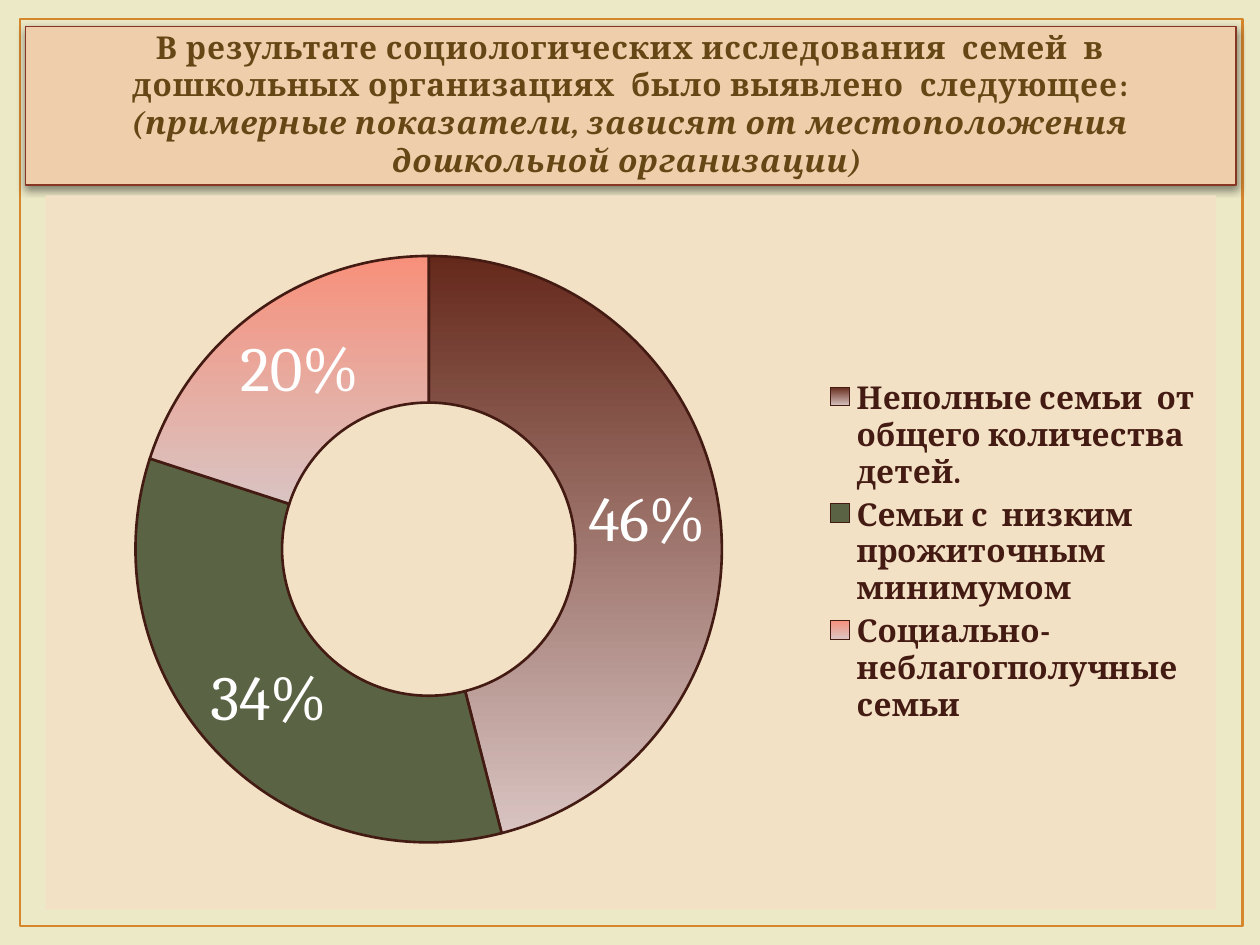
"""Build a slide with a framed title and a doughnut chart of family groups."""
import lxml.etree
import pptx
import pptx.chart.data
import pptx.dml.color
import pptx.enum.chart
import pptx.enum.shapes
import pptx.enum.text
import pptx.oxml
import pptx.oxml.ns
import pptx.util

Inches = pptx.util.Inches
Pt = pptx.util.Pt
qn = pptx.oxml.ns.qn

COLOURS = {
    "page": "ECE9C6", "frame": "D6862D", "title": "EFCFAB", "title_line": "873624",
    "title_text": "674616", "panel": "F3E1C6", "dark": "441B12", "label": "FFFFFF",
}
FONT = "Cambria"
HEADING = "В результате социологических исследования  семей  в дошкольных организациях  было выявлено  следующее:"
NOTE = "(примерные показатели, зависят от местоположения дошкольной организации) "
FAMILIES = [
    ("Неполные семьи  от общего количества детей.", 0.46, ("65291B", "D9C4C2")),
    ("Семьи с  низким прожиточным минимумом", 0.34, ("5A6343",)),
    ("Социально-неблагогполучные семьи", 0.2, ("F7907B", "D9C4C2")),
]
FRAME = (0.16, 0.15, 9.7, 7.2)
TITLE = (0.2, 0.21, 9.61, 1.26)
CHART = (0.36, 1.55, 9.29, 5.67)
PLOT = {"x": 0.077, "y": 0.085, "w": 0.501, "h": 0.821}
NAMESPACES = " ".join(pptx.oxml.ns.nsdecls(prefix) for prefix in ("a", "c"))
SHADOW = (
    f'<a:effectLst {NAMESPACES}><a:outerShdw blurRad="63500" dist="25400" dir="5400000">'
    '<a:srgbClr val="000000"><a:alpha val="43000"/></a:srgbClr></a:outerShdw></a:effectLst>'
)


def colour(value):
    return pptx.dml.color.RGBColor.from_string(value)


def paint(item, fill=None, line=None, width=1):
    if fill:
        item.fill.solid()
        item.fill.fore_color.rgb = colour(fill)
    if line:
        item.line.color.rgb = colour(line)
        item.line.width = Pt(width)


def style_font(font, size, value, bold=False, italic=False):
    font.name, font.size, font.bold, font.italic = FONT, Pt(size), bold, italic
    font.color.rgb = colour(value)


def add_text(para, text, spacing=0, **style):
    span = para.add_run()
    span.text = text
    style_font(span.font, **style)
    span.font._element.set("spc", str(int(spacing * 100)))


def add_title(page):
    box = page.shapes.title
    box.left, box.top, box.width, box.height = map(Inches, TITLE)
    paint(box, COLOURS["title"], COLOURS["title_line"], 0.75)
    box._element.spPr.append(pptx.oxml.parse_xml(SHADOW))
    frame = box.text_frame
    frame.word_wrap = True
    frame.auto_size = pptx.enum.text.MSO_AUTO_SIZE.NONE
    frame.vertical_anchor = pptx.enum.text.MSO_ANCHOR.BOTTOM
    para = frame.paragraphs[0]
    para.alignment = pptx.enum.text.PP_ALIGN.CENTER
    style = {"size": 18, "value": COLOURS["title_text"], "bold": True, "spacing": 0.5}
    add_text(para, HEADING, **style)
    para.add_line_break()
    add_text(para, NOTE, italic=True, **style)


def place_plot(chart):
    edges = "".join(f'<c:{key}Mode val="edge"/>' for key in "xy")
    sizes = "".join(f'<c:{key} val="{value}"/>' for key, value in PLOT.items())
    area = chart._chartSpace.chart.plotArea
    for old in area.findall(qn("c:layout")):
        area.remove(old)
    area.insert(0, pptx.oxml.parse_xml(
        f'<c:layout {NAMESPACES}><c:manualLayout><c:layoutTarget val="inner"/>'
        f'{edges}{sizes}</c:manualLayout></c:layout>'))


def add_families(page):
    data = pptx.chart.data.CategoryChartData(number_format="0%")
    names, values, fills = zip(*FAMILIES)
    data.categories = names
    data.add_series("Series 1", values)
    kind = pptx.enum.chart.XL_CHART_TYPE.DOUGHNUT
    chart = page.shapes.add_chart(kind, *map(Inches, CHART), data).chart
    chart.has_title = False
    chart.font.name, chart.font.size = "Calibri", Pt(18)
    chart._chartSpace.chart.addnext(pptx.oxml.parse_xml(
        f'<c:spPr {NAMESPACES}><a:solidFill><a:srgbClr val="{COLOURS["panel"]}"/></a:solidFill>'
        '<a:ln><a:noFill/></a:ln></c:spPr>'))
    place_plot(chart)
    chart.has_legend = True
    chart.legend.position = pptx.enum.chart.XL_LEGEND_POSITION.RIGHT
    chart.legend.include_in_layout = False
    style_font(chart.legend.font, 18, COLOURS["dark"], bold=True)
    series = chart.plots[0].series[0]
    for index, shades in enumerate(fills):
        part = series.points[index].format
        paint(part, line=COLOURS["dark"], width=1.5)
        if len(shades) == 1:
            paint(part, shades[0])
            continue
        part.fill.gradient()
        part.fill.gradient_angle = 270
        for stop, shade, position in zip(part.fill.gradient_stops, shades, (0, 1)):
            stop.color.rgb = colour(shade)
            stop.position = position
    labels = series.data_labels
    labels.show_value = True
    labels.show_percentage = False
    labels.number_format, labels.number_format_is_linked = "0%", False
    style_font(labels.font, 36, COLOURS["label"])


def main():
    deck = pptx.Presentation()
    deck.slide_width, deck.slide_height = Inches(10), Inches(7.5)
    page = deck.slides.add_slide(deck.slide_layouts[5])
    paint(page.background, COLOURS["page"])
    rectangle = pptx.enum.shapes.MSO_SHAPE.RECTANGLE
    border = page.shapes.add_shape(rectangle, *map(Inches, FRAME))
    border.shadow.inherit = False
    border.fill.background()
    paint(border, line=COLOURS["frame"], width=1.5)
    page.shapes.title._element.addprevious(border._element)
    add_title(page)
    add_families(page)
    deck.save("out.pptx")


if __name__ == "__main__":
    main()
